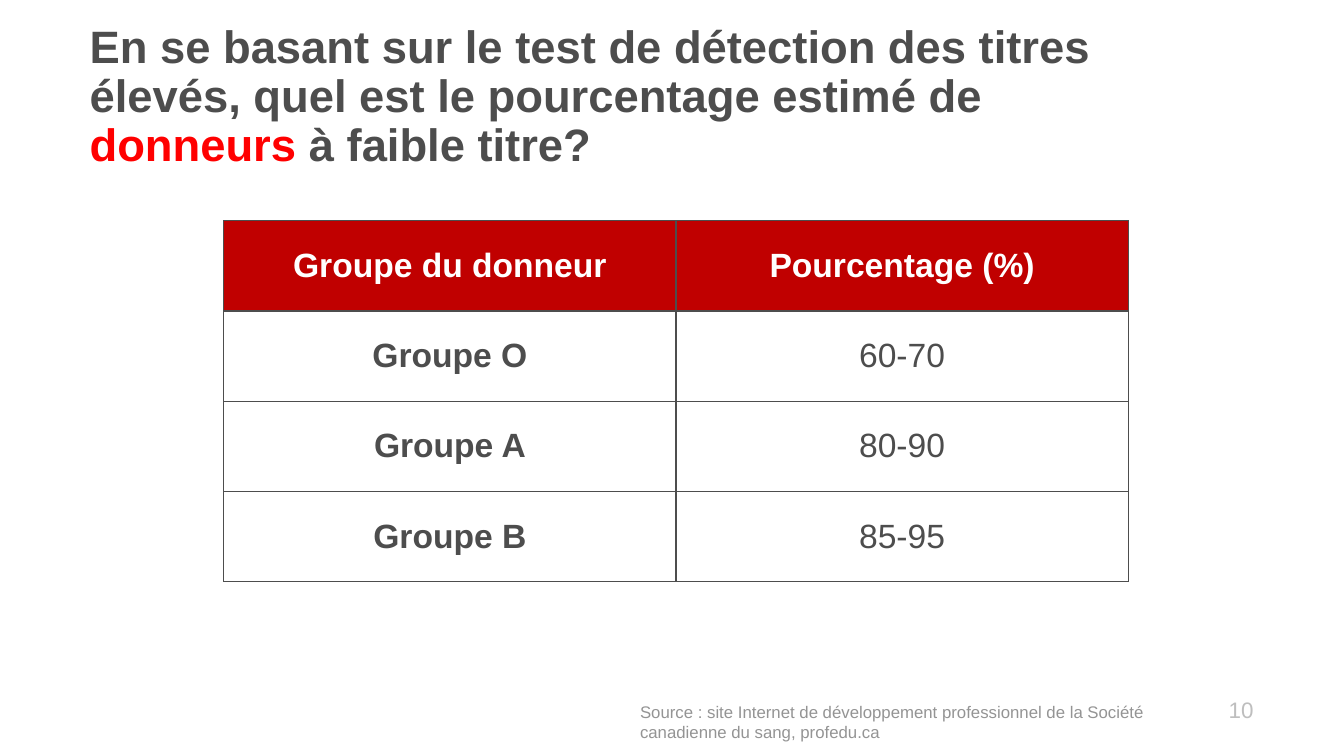
import pptx
import pptx.dml.color
import pptx.enum.text
import pptx.oxml
import pptx.oxml.ns
import pptx.util

WIDTH, HEIGHT = pptx.util.Inches(13.33), pptx.util.Inches(7.5)
FONT = "Arial"
GREY = pptx.dml.color.RGBColor(0x4D, 0x4D, 0x4D)
SOURCE_GREY = pptx.dml.color.RGBColor(0x94, 0x94, 0x94)
NUMBER_GREY = pptx.dml.color.RGBColor(0xBE, 0xBE, 0xBE)
RED = pptx.dml.color.RGBColor(0xFF, 0x00, 0x00)
HEADER_RED = pptx.dml.color.RGBColor(0xC0, 0x00, 0x00)
WHITE = pptx.dml.color.RGBColor(0xFF, 0xFF, 0xFF)
ALIGN = pptx.enum.text.PP_ALIGN
ANCHOR = pptx.enum.text.MSO_ANCHOR

TITLE = [
    ("En se basant sur le test de détection des titres élevés, "
     "quel est le pourcentage estimé de ", GREY),
    ("donneurs ", RED),
    ("à faible titre?", GREY),
]
SOURCE = ("Source\u00a0: site Internet de développement professionnel "
          "de la Société canadienne du sang, profedu.ca")
ROWS = [
    ("Groupe du donneur", "Pourcentage (%)"),
    ("Groupe O", "60-70"),
    ("Groupe A", "80-90"),
    ("Groupe B", "85-95"),
]


def inches(box):
    """Turn a box in inches into lengths."""
    return [pptx.util.Inches(length) for length in box]


def add_run(paragraph, text, size, color, bold=False):
    """Add one formatted run to a paragraph."""
    run = paragraph.add_run()
    run.text = text
    run.font.name = FONT
    run.font.size = pptx.util.Pt(size)
    run.font.bold = bold
    run.font.color.rgb = color


def add_text(slide, box, runs, size, bold=False, anchor=ANCHOR.TOP,
             align=ALIGN.LEFT, line_spacing=1.0):
    """Place a wrapped one-paragraph text box."""
    frame = slide.shapes.add_textbox(*inches(box)).text_frame
    frame.word_wrap = True
    frame.vertical_anchor = anchor
    paragraph = frame.paragraphs[0]
    paragraph.alignment = align
    paragraph.line_spacing = line_spacing
    for text, color in runs:
        add_run(paragraph, text, size, color, bold)


def add_borders(cell):
    """Draw a thin grey line on every side of a cell."""
    properties = cell._tc.get_or_add_tcPr()
    for position, side in enumerate(("lnL", "lnR", "lnT", "lnB")):
        line = pptx.oxml.parse_xml(
            f'<a:{side} {pptx.oxml.ns.nsdecls("a")} w="{pptx.util.Pt(1)}">'
            f'<a:solidFill><a:srgbClr val="{GREY}"/></a:solidFill></a:{side}>')
        properties.insert(position, line)


def add_percentage_table(slide, box, rows):
    """Place the table of donor groups with equal rows and columns."""
    left, top, width, height = inches(box)
    table = slide.shapes.add_table(
        len(rows), len(rows[0]), left, top, width, height).table
    table.horz_banding = False
    for row_index, texts in enumerate(rows):
        is_header = row_index == 0
        for column_index, text in enumerate(texts):
            cell = table.cell(row_index, column_index)
            cell.vertical_anchor = ANCHOR.MIDDLE
            if is_header:
                cell.fill.solid()
                cell.fill.fore_color.rgb = HEADER_RED
            else:
                cell.fill.background()
            add_borders(cell)
            paragraph = cell.text_frame.paragraphs[0]
            paragraph.alignment = ALIGN.CENTER
            add_run(paragraph, text, 24, WHITE if is_header else GREY,
                    is_header or column_index == 0)


def add_footer(slide, number_box, source_box):
    """Place the slide number and the source."""
    add_text(slide, number_box, [("10", NUMBER_GREY)], 16,
             anchor=ANCHOR.MIDDLE, align=ALIGN.RIGHT, line_spacing=0.9)
    add_text(slide, source_box, [(SOURCE, SOURCE_GREY)], 12)


def main():
    """Build and save the slide."""
    presentation = pptx.Presentation()
    presentation.slide_width, presentation.slide_height = WIDTH, HEIGHT
    slide = presentation.slides.add_slide(presentation.slide_layouts[6])
    add_text(slide, (0.79, 0.72, 10.91, 1.03), TITLE, 32.4, bold=True,
             anchor=ANCHOR.BOTTOM, line_spacing=0.9)
    add_percentage_table(slide, (2.22, 2.19, 8.97, 3.58), ROWS)
    add_footer(slide, (0.95, 6.62, 11.58, 0.88), (6.25, 6.91, 6.03, 0.5))
    presentation.save("out.pptx")


if __name__ == "__main__":
    main()
